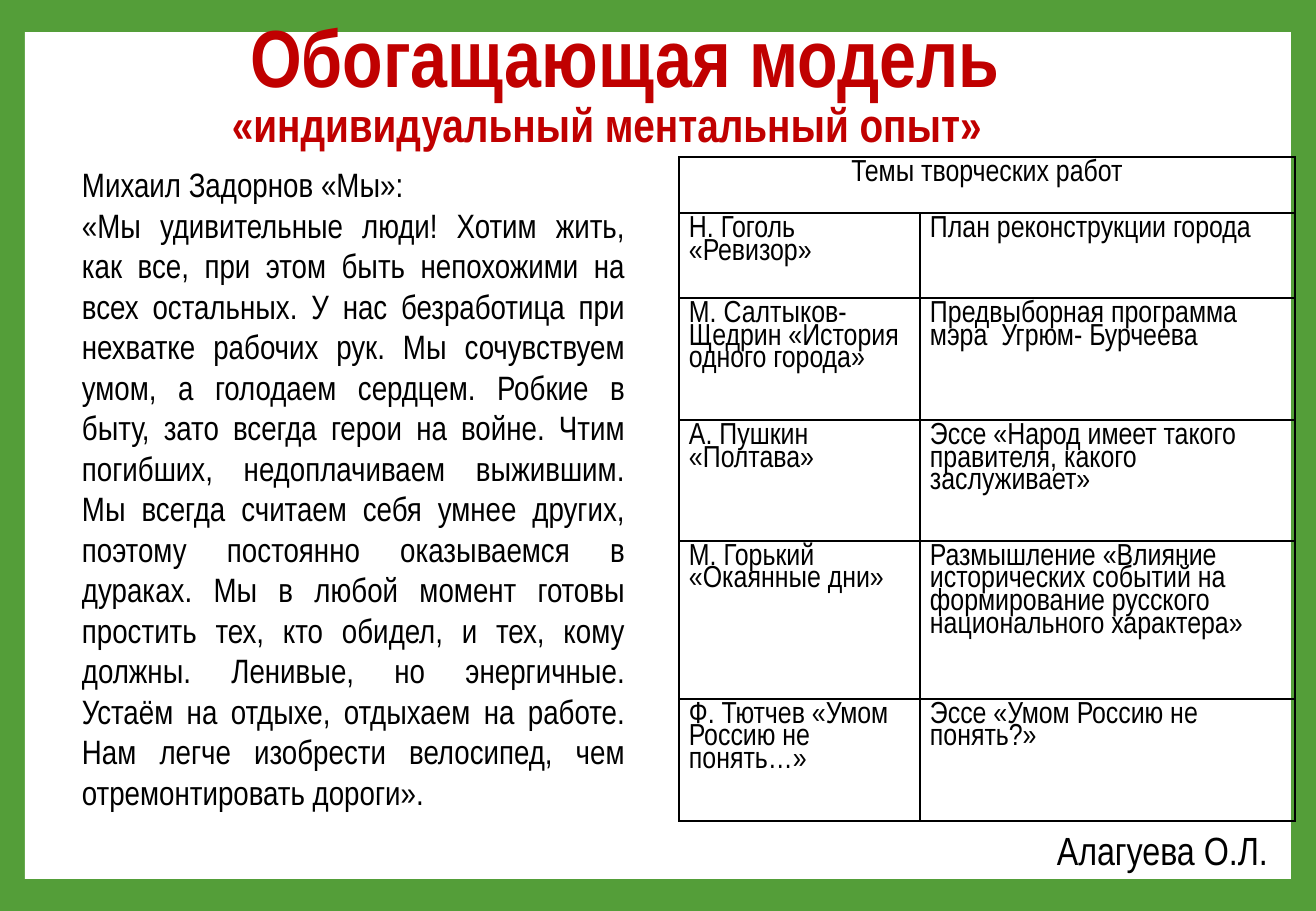
from pptx import Presentation
from pptx import util as u
from pptx.dml.color import RGBColor
from pptx.enum import shapes, text
from lxml import etree

PX = 7526
NS = "http://schemas.openxmlformats.org/drawingml/2006/main"
FONT = "Arial Narrow"
HUES = {"green": "549E39", "white": "FFFFFF", "red": "C00000", "black": "000000"}
ALIGN = text.PP_ALIGN


def write(par, words, size, hue="black", bold=False, align=ALIGN.LEFT, gap=1.0):
    par.alignment = align
    par.line_spacing = gap
    run = par.add_run()
    run.text = words
    font = run.font
    font.name, font.size, font.bold = FONT, u.Pt(size), bold
    font.color.rgb = RGBColor.from_string(HUES[hue])


def place(box, *rect):
    box.left, box.top, box.width, box.height = [n * PX for n in rect]
    frame = box.text_frame
    frame.word_wrap = True
    frame.auto_size = text.MSO_AUTO_SIZE.NONE
    frame.vertical_anchor = text.MSO_ANCHOR.TOP
    return frame


deck = Presentation()
deck.slide_width, deck.slide_height = 1316 * PX, 911 * PX
slide = deck.slides.add_slide(deck.slide_layouts[5])
back = slide.background.fill
back.solid()
back.fore_color.rgb = RGBColor.from_string(HUES["green"])

sheet = slide.shapes.add_shape(
    shapes.MSO_SHAPE.RECTANGLE, *[n * PX for n in (25, 32, 1266, 847)])
sheet.shadow.inherit = False
sheet.fill.solid()
sheet.fill.fore_color.rgb = RGBColor.from_string(HUES["white"])
sheet.line.fill.background()
sheet.element.getparent().insert(2, sheet.element)

author = place(slide.shapes.add_textbox(0, 0, 0, 0), 392, 829, 888, 49)
write(author.paragraphs[0], "Алагуева О.Л.", 23.3, align=ALIGN.RIGHT, gap=0.8)

title = place(slide.shapes.title, 238, 0, 801, 111)
write(title.paragraphs[0], "Обогащающая модель", 48, "red", True)

theme = place(slide.shapes.add_textbox(0, 0, 0, 0), 220, 89, 782, 69)
write(theme.paragraphs[0], "«индивидуальный ментальный опыт»", 28, "red", True)

quote = place(slide.shapes.add_textbox(0, 0, 0, 0), 70, 158, 567, 667)
write(quote.paragraphs[0], "Михаил Задорнов «Мы»:", 20, align=ALIGN.JUSTIFY)
write(quote.add_paragraph(),
      "«Мы удивительные люди! Хотим жить, как все, при этом быть непохожими на "
      "всех остальных. У нас безработица при нехватке рабочих рук. Мы сочувствуем "
      "умом, а голодаем сердцем. Робкие в быту, зато всегда герои на войне. Чтим "
      "погибших, недоплачиваем выжившим. Мы всегда считаем себя умнее других, "
      "поэтому постоянно оказываемся в дураках. Мы в любой момент готовы простить "
      "тех, кто обидел, и тех, кому должны. Ленивые, но энергичные. Устаём на "
      "отдыхе, отдыхаем на работе. Нам легче изобрести велосипед, чем "
      "отремонтировать дороги».", 20, align=ALIGN.JUSTIFY)

works = [
    (56, "Темы творческих работ", ""),
    (85, "Н. Гоголь «Ревизор»", "План реконструкции города"),
    (122, "М. Салтыков- Щедрин «История одного города»",
     "Предвыборная программа  мэра  Угрюм- Бурчеева"),
    (121, "А. Пушкин «Полтава»",
     "Эссе «Народ имеет такого правителя, какого заслуживает»"),
    (158, "М. Горький «Окаянные дни»",
     "Размышление «Влияние исторических событий на формирование русского "
     "национального характера»"),
    (122, "Ф. Тютчев «Умом Россию не понять…»", "Эссе «Умом Россию не понять?»"),
]
tall = sum(work[0] for work in works)
grid = slide.shapes.add_table(
    len(works), 2, 679 * PX, 157 * PX, 616 * PX, tall * PX).table
grid.first_row = grid.horz_banding = False
for col, wide in zip(grid.columns, (241, 375)):
    col.width = wide * PX
for row, (high, *words) in zip(grid.rows, works):
    row.height = high * PX
    for cell, word in zip(row.cells, words):
        cell.margin_left = cell.margin_right = 10 * PX
        cell.margin_top = cell.margin_bottom = 6 * PX
        if word:
            side = ALIGN.CENTER if high == works[0][0] else ALIGN.LEFT
            write(cell.text_frame.paragraphs[0], word, 18, align=side, gap=0.8)
        props = cell._tc.get_or_add_tcPr()
        for edge in ("lnL", "lnR", "lnT", "lnB"):
            line = etree.SubElement(props, f"{{{NS}}}{edge}", w=str(u.Pt(1)))
            fill = etree.SubElement(line, f"{{{NS}}}solidFill")
            etree.SubElement(fill, f"{{{NS}}}srgbClr", val=HUES["black"])
        cell.fill.background()
grid.cell(0, 0).merge(grid.cell(0, 1))

deck.save("out.pptx")
